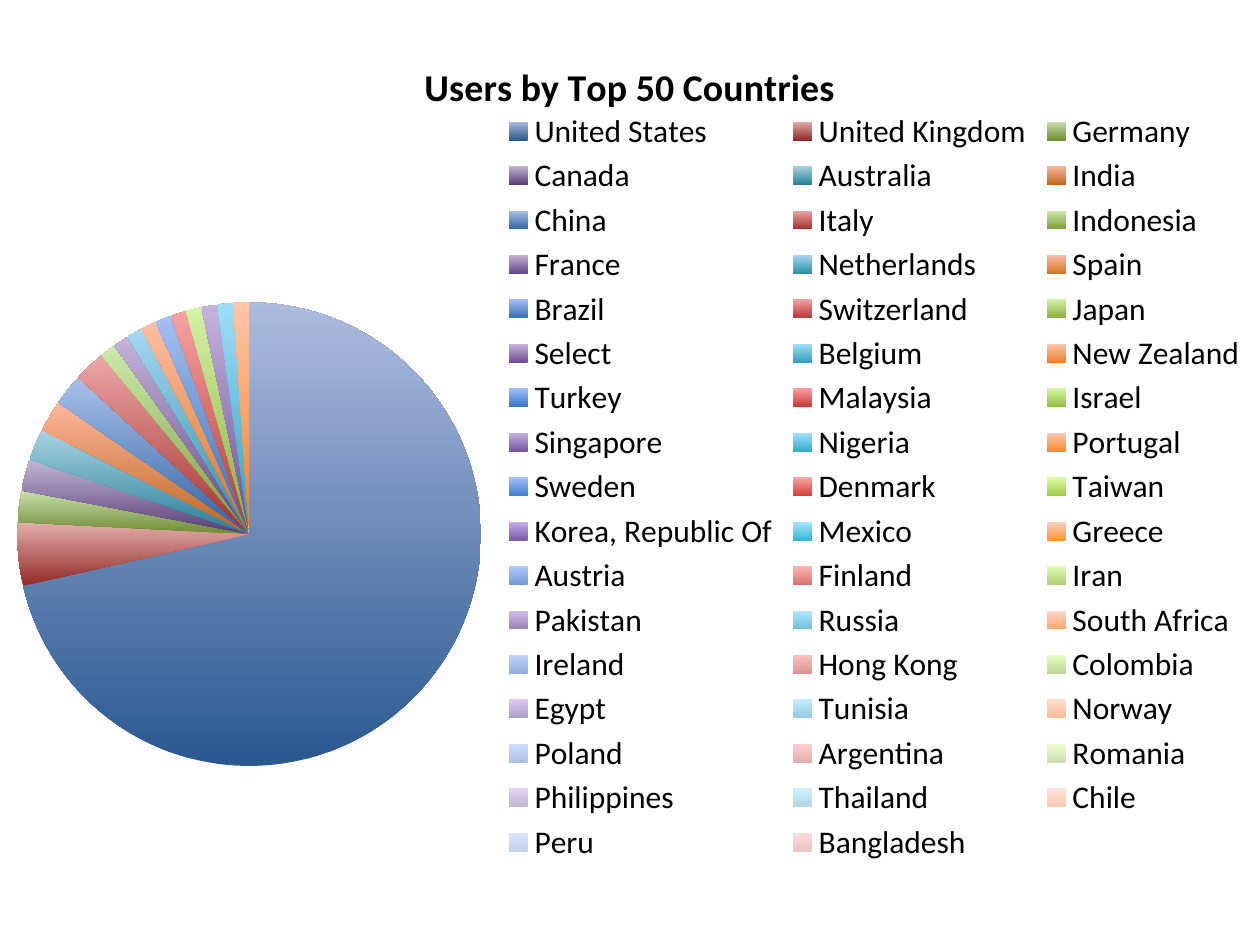
import pptx
import pptx.chart.data
import pptx.dml.color
import pptx.enum.chart
import pptx.util

COLORS = {"text": "000000"}
COUNTRIES = [
    "United States", "United Kingdom", "Germany", "Canada", "Australia", "India",
    "China", "Italy", "Indonesia", "France", "Netherlands", "Spain",
    "Brazil", "Switzerland", "Japan", "Select", "Belgium", "New Zealand",
    "Turkey", "Malaysia", "Israel", "Singapore", "Nigeria", "Portugal",
    "Sweden", "Denmark", "Taiwan", "Korea, Republic Of", "Mexico", "Greece",
    "Austria", "Finland", "Iran", "Pakistan", "Russia", "South Africa",
    "Ireland", "Hong Kong", "Colombia", "Egypt", "Tunisia", "Norway",
    "Poland", "Argentina", "Romania", "Philippines", "Thailand", "Chile",
    "Peru", "Bangladesh",
]
SHARES = [65, 4] + [2] * 6 + [1] * 10 + [0] * 32

deck = pptx.Presentation()
deck.slide_width = pptx.util.Inches(10)
deck.slide_height = pptx.util.Inches(7.5)
page = deck.slides.add_slide(deck.slide_layouts[6])

data = pptx.chart.data.CategoryChartData()
data.categories = COUNTRIES
data.add_series("Series 1", SHARES)
top = int(deck.slide_height * 0.03)
chart = page.shapes.add_chart(
    pptx.enum.chart.XL_CHART_TYPE.PIE,
    0, top, deck.slide_width, deck.slide_height - top, data,
).chart
chart.chart_style = 18
chart.plots[0].vary_by_categories = True
chart.font.name = "Calibri"
chart.font.size = pptx.util.Pt(18)
chart.font.color.rgb = pptx.dml.color.RGBColor.from_string(COLORS["text"])

chart.has_title = True
para = chart.chart_title.text_frame.paragraphs[0]
span = para.add_run()
span.text = "Users by Top 50 Countries"
span.font.name = "Calibri"
span.font.size = pptx.util.Pt(21.6)
span.font.bold = True
span.font.color.rgb = pptx.dml.color.RGBColor.from_string(COLORS["text"])

chart.has_legend = True
chart.legend.position = pptx.enum.chart.XL_LEGEND_POSITION.RIGHT
chart.legend.include_in_layout = False

deck.save("out.pptx")
